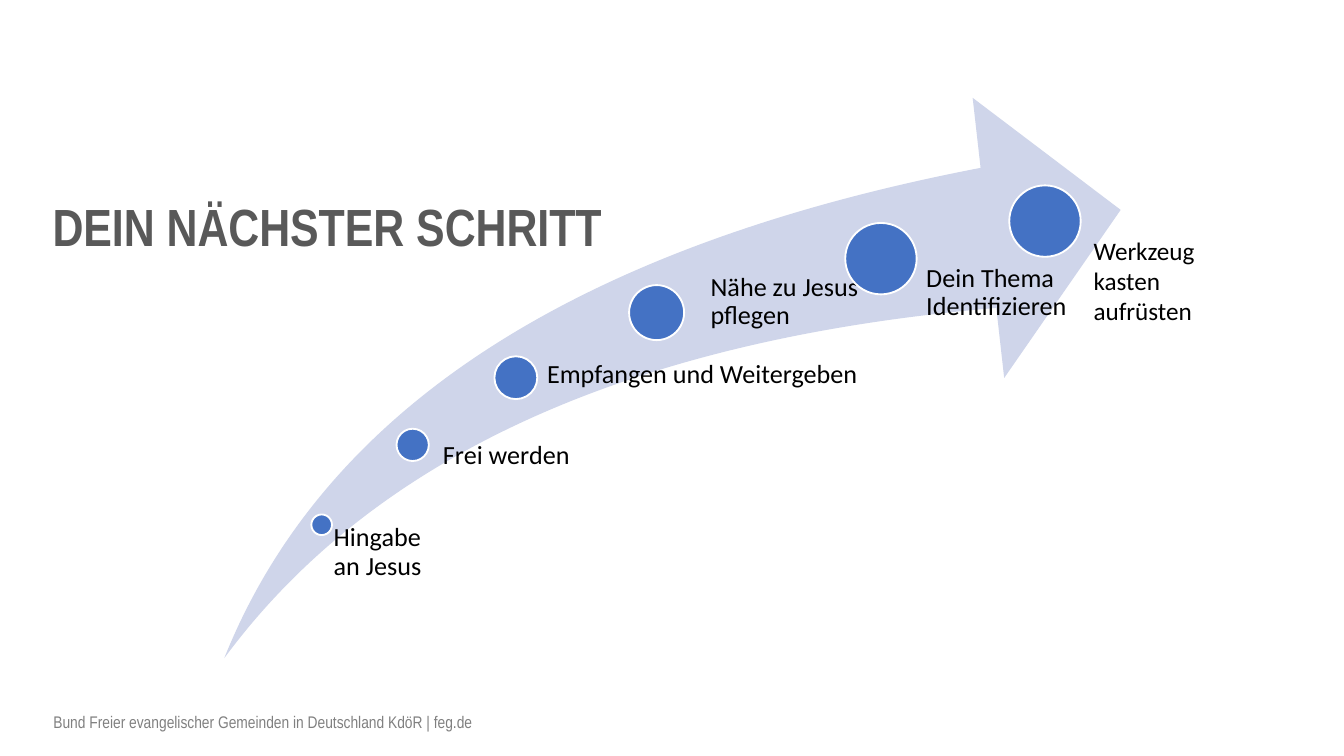
from pptx import Presentation
from pptx.dml.color import RGBColor as Rgb
from pptx.enum.shapes import MSO_SHAPE as Form
from pptx.enum.text import MSO_ANCHOR as Anchor, MSO_AUTO_SIZE as Fit, PP_ALIGN as Align
from pptx.util import Cm, Pt

COLORS = {"title": "595959", "foot": "808080", "text": "000000",
          "swoosh": "CFD5EA", "dot": "4472C4", "edge": "FFFFFF"}
HEAD = {"name": "Arial Narrow", "size": Pt(28), "bold": True}
FOOT = {"name": "Arial Narrow", "size": Pt(9)}
STEP = {"name": "Calibri", "size": Pt(14)}
LAST = {"name": "Calibri", "size": Pt(13.5)}
MIDDLE = {"vertical_anchor": Anchor.MIDDLE}

# Text, dot (centre x, centre y, diameter), label box; cm from the arrow's corner
STEPS = [
    ("Hingabe an Jesus", (1.84, 8.07, 0.39), (1.86, 8.06, 2.21, 2.51)),
    ("Frei werden", (3.56, 6.56, 0.61), (3.81, 6.51, 2.82, 4.45)),
    ("Empfangen und Weitergeben", (5.51, 5.29, 0.81), (5.67, 4.98, 6.83, 5.94)),
    ("Nähe zu Jesus pflegen", (8.17, 4.06, 1.04), (8.64, 3.33, 3.38, 7.09)),
    ("Dein Thema Identifizieren", (12.41, 3.04, 1.35), (12.55, 3.15, 3.38, 7.8)),
    ("Werkzeugkasten aufrüsten", (15.51, 2.33, 1.35), (16.18, 2.47, 2.54, 2.57)),
]


def put(item, form):
    for key, val in form.items():
        setattr(item, key, val)


def cms(box):
    return [Cm(val) for val in box]


def write(shape, text, font, color, frame=None, para=None):
    body = shape.text_frame
    body.text = text
    put(body, {"word_wrap": True, "auto_size": Fit.NONE, **(frame or {})})
    line = body.paragraphs[0]
    put(line, {"alignment": Align.LEFT, **(para or {})})
    put(line.font, font)
    line.font.color.rgb = Rgb.from_string(COLORS[color])


def draw(slide, form, box, fill):
    shape = slide.shapes.add_shape(form, *cms(box))
    shape.shadow.inherit = False
    shape.fill.solid()
    shape.fill.fore_color.rgb = Rgb.from_string(COLORS[fill])
    return shape


def add_title(slide, box):
    title = slide.shapes.title
    put(title, dict(zip(("left", "top", "width", "height"), cms(box))))
    write(title, "DEIN NÄCHSTER SCHRITT", HEAD, "title", MIDDLE, {"line_spacing": 0.9})


def add_foot(slide, box):
    foot = slide.shapes.add_textbox(*cms(box))
    write(foot, "Bund Freier evangelischer Gemeinden in Deutschland KdöR | feg.de",
          FOOT, "foot", MIDDLE)


def add_dot(slide, x, y, size):
    dot = draw(slide, Form.OVAL, (x - size / 2, y - size / 2, size, size), "dot")
    dot.line.color.rgb = Rgb.from_string(COLORS["edge"])
    dot.line.width = Pt(1)


def add_path(slide, box):
    left, top = box[:2]
    swoosh = draw(slide, Form.SWOOSH_ARROW, box, "swoosh")
    swoosh.line.fill.background()
    swoosh.adjustments[0] = swoosh.adjustments[1] = 0.25

    # Dots grow along the arrow, and the label indent grows with them
    for text, (x, y, size), (lx, ly, wide, high) in STEPS:
        add_dot(slide, left + x, top + y, size)
        label = slide.shapes.add_textbox(*cms((left + lx, top + ly, wide, high)))
        if text == STEPS[-1][0]:
            write(label, text, LAST, "text", {"auto_size": Fit.SHAPE_TO_FIT_TEXT})
        else:
            inset = {"margin_left": Cm(0.53 * size), "margin_top": 0,
                     "margin_right": 0, "margin_bottom": 0}
            write(label, text, STEP, "text", inset, {"line_spacing": 0.9})


def main():
    deck = Presentation()
    put(deck, {"slide_width": Cm(25.4), "slide_height": Cm(14.29)})
    slide = deck.slides.add_slide(deck.slide_layouts[5])
    add_foot(slide, (0.76, 13.23, 23.77, 0.81))
    add_title(slide, (0.74, 3.12, 20.24, 2.44))
    add_path(slide, (4.24, 1.85, 16.94, 10.59))
    deck.save("out.pptx")


if __name__ == "__main__":
    main()
